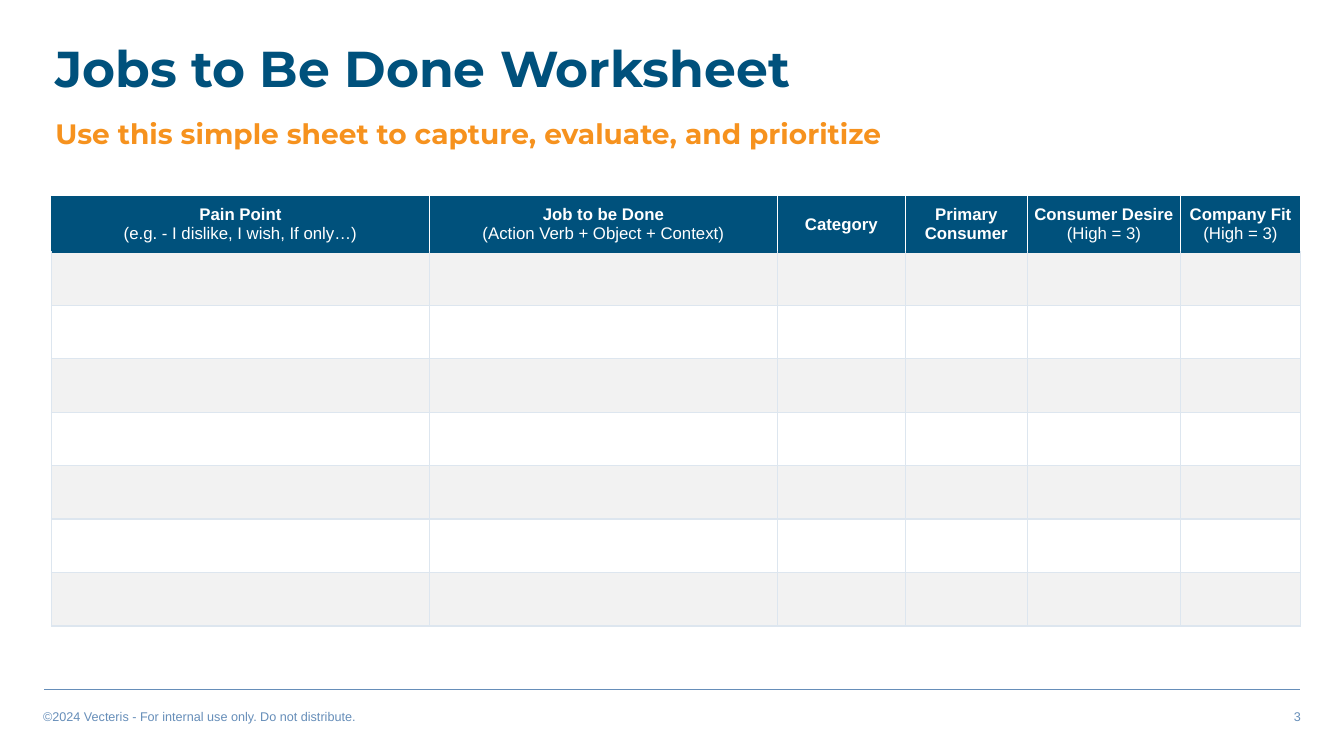
"""Build the Jobs to Be Done worksheet slide."""
from lxml.etree import SubElement as Sub
from pptx import Presentation
from pptx.dml.color import RGBColor as RGB
from pptx.enum.shapes import MSO_CONNECTOR as Link
from pptx.enum.text import MSO_ANCHOR as Anchor, PP_ALIGN as Align
from pptx.oxml.ns import qn
from pptx.util import Pt

PX = 9144
NAVY = RGB(0x00, 0x51, 0x7C)
ORANGE = RGB(0xF6, 0x92, 0x1E)
STEEL = RGB(0x66, 0x8E, 0xB9)
MIST = RGB(0xDD, 0xE6, 0xEF)
GRAY = RGB(0xF2, 0xF2, 0xF2)
WHITE = RGB(0xFF, 0xFF, 0xFF)

WIDTHS = (375, 345, 127, 121, 152, 119)
HEAD_H, ROW_H, ROWS = 55, 53, 7
HEADS = (
    (("Pain Point",), ("(e.g. - I dislike, I wish, If only…)",)),
    (("Job to be Done",), ("(Action Verb + Object + Context)",)),
    (("Category",),),
    (("Primary Consumer",),),
    (("Consumer Desire",), ("(High = 3)",)),
    (("Company Fit ", "(High = 3)"),),
)


def px(*nums):
    """Turn pixel lengths into EMU."""
    return [n * PX for n in nums]


def style(para, size, color, face="Arial", bold=None, align=Align.LEFT):
    """Set the font and alignment of a paragraph."""
    font = para.font
    font.size, font.name, font.bold = Pt(size), face, bold
    font.color.rgb = color
    para.alignment = align


def add_text(slide, box, text, size, color, anchor=Anchor.TOP, space=1.0, **look):
    """Add a wrapped one-paragraph text box."""
    frame = slide.shapes.add_textbox(*px(*box)).text_frame
    frame.word_wrap = True
    frame.vertical_anchor = anchor
    para = frame.paragraphs[0]
    para.text = text
    para.line_spacing = space
    style(para, size, color, **look)


def add_rule(slide, left, right, top):
    """Add the thin footer line."""
    line = slide.shapes.add_connector(Link.STRAIGHT, *px(left, top, right, top))
    line.line.color.rgb = STEEL
    line.line.width = Pt(1)
    Sub(line._element.spPr, qn("a:effectLst"))


def paint(cell, fill, **edges):
    """Set the borders, then the fill, of a table cell."""
    props = cell._tc.get_or_add_tcPr()
    for side in "LRTB":
        edge = Sub(props, qn(f"a:ln{side}"), w=str(Pt(1)))
        solid = Sub(edge, qn("a:solidFill"))
        Sub(solid, qn("a:srgbClr"), val=str(edges[side]))
    cell.fill.solid()
    cell.fill.fore_color.rgb = fill


def fill_head(cell, paras):
    """Write a header cell, with bracketed runs in regular weight."""
    cell.vertical_anchor = Anchor.MIDDLE
    cell.margin_left = cell.margin_right = 6 * PX
    cell.margin_top = cell.margin_bottom = 3 * PX
    frame = cell.text_frame
    for i, runs in enumerate(paras):
        para = frame.add_paragraph() if i else frame.paragraphs[0]
        style(para, 12, WHITE, align=Align.CENTER)
        for text in runs:
            run = para.add_run()
            run.text = text
            run.font.bold = not text.startswith("(")


def add_grid(slide, left, top):
    """Add the worksheet table with a header and striped rows."""
    high = HEAD_H + ROWS * ROW_H
    box = px(left, top, sum(WIDTHS), high)
    table = slide.shapes.add_table(ROWS + 1, len(WIDTHS), *box).table
    table.first_row = table.horz_banding = False
    for col, wide in zip(table.columns, WIDTHS):
        col.width = wide * PX
    for r, row in enumerate(table.rows):
        row.height = (ROW_H if r else HEAD_H) * PX
        for c, cell in enumerate(row.cells):
            if r:
                roof = NAVY if r == 1 else MIST
                paint(cell, GRAY if r % 2 else WHITE, L=MIST, R=MIST, T=roof, B=MIST)
            else:
                fill_head(cell, HEADS[c])
                paint(cell, NAVY, L=WHITE if c else NAVY, R=WHITE, T=NAVY, B=NAVY)


def main():
    """Build and save the slide."""
    deck = Presentation()
    deck.slide_width, deck.slide_height = px(1333, 750)
    slide = deck.slides.add_slide(deck.slide_layouts[6])
    add_rule(slide, 44, 1289, 684)
    add_text(slide, (33, 698, 533, 25),
             "©2024 Vecteris - For internal use only. Do not distribute.", 9, STEEL)
    add_text(slide, (767, 698, 533, 25), "3", 9, STEEL, align=Align.RIGHT)
    add_text(slide, (45, 33, 852, 76), "Jobs to Be Done Worksheet", 36, NAVY,
             Anchor.MIDDLE, 0.9, face="Montserrat", bold=True)
    add_text(slide, (45, 101, 1244, 58),
             "Use this simple sheet to capture, evaluate, and prioritize", 20, ORANGE,
             Anchor.MIDDLE, 1.15, face="Montserrat", bold=True)
    add_grid(slide, 51, 195)
    deck.save("out.pptx")


if __name__ == "__main__":
    main()
